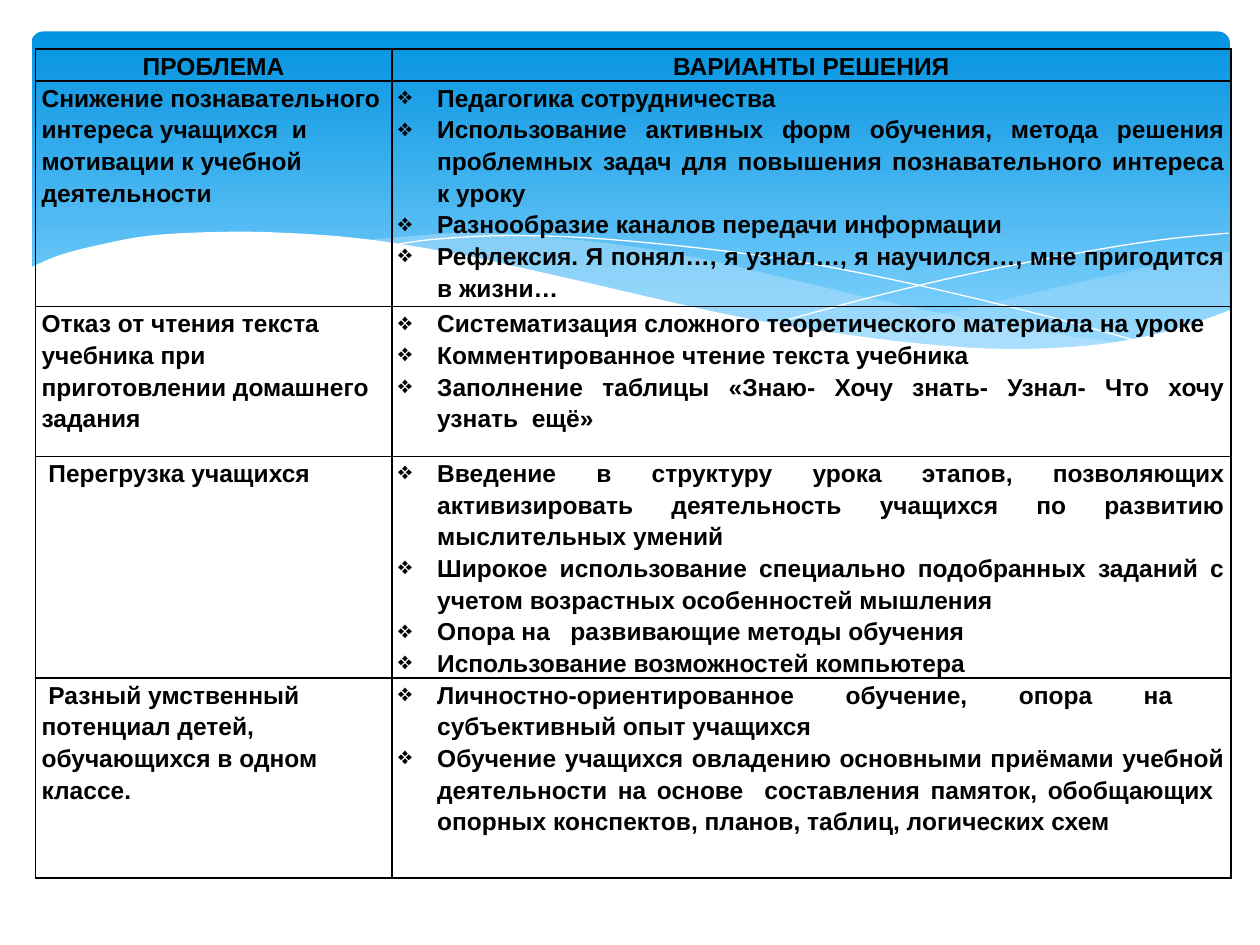
from lxml.etree import SubElement
from pptx import Presentation
from pptx.dml.color import RGBColor
from pptx.enum.shapes import MSO_SHAPE
from pptx.enum.text import PP_ALIGN
from pptx.oxml.ns import qn
from pptx.util import Inches, Pt

BLACK = RGBColor(0x00, 0x00, 0x00)
WHITE = RGBColor(0xFF, 0xFF, 0xFF)
DEEP_BLUE = RGBColor(0x02, 0x93, 0xE0)
SKY_BLUE = RGBColor(0x83, 0xD3, 0xFE)
PALE_BLUE = RGBColor(0xC6, 0xE7, 0xFC)

HEADERS = ["ПРОБЛЕМА", "ВАРИАНТЫ РЕШЕНИЯ"]
PROBLEMS = [
    ("Снижение познавательного интереса учащихся  и мотивации к учебной деятельности", [
        "Педагогика сотрудничества",
        "Использование активных форм обучения, метода решения проблемных задач "
        "для повышения познавательного интереса к уроку",
        "Разнообразие каналов передачи информации",
        "Рефлексия. Я понял…, я узнал…, я научился…, мне пригодится в жизни…",
    ]),
    ("Отказ от чтения текста учебника при приготовлении домашнего задания", [
        "Систематизация сложного теоретического материала на уроке ",
        "Комментированное чтение текста учебника ",
        "Заполнение таблицы «Знаю- Хочу знать- Узнал- Что хочу узнать  ещё»",
    ]),
    (" Перегрузка учащихся", [
        "Введение в структуру урока этапов, позволяющих активизировать "
        "деятельность учащихся по развитию мыслительных умений ",
        "Широкое использование специально подобранных заданий с учетом "
        "возрастных особенностей мышления",
        "Опора на   развивающие методы обучения",
        "Использование возможностей компьютера",
    ]),
    (" Разный умственный потенциал детей, обучающихся в одном классе.", [
        "Личностно-ориентированное обучение, опора на  субъективный опыт учащихся ",
        "Обучение учащихся овладению основными приёмами учебной деятельности на основе  "
        "составления памяток, обобщающих  опорных конспектов, планов, таблиц, логических схем",
    ]),
]
COLUMN_WIDTHS = [2.83, 6.66]
ROW_HEIGHTS = [0.2, 1.79, 1.19, 1.64, 1.59]

RIGHT_TOP = [(9.76, 2), (9.35, 2.07), (8.61, 2.23), (7.53, 2.48), (6.61, 2.65)]
RIGHT_BOTTOM = [(6.61, 2.65), (7.19, 2.72), (7.69, 2.77), (8.24, 2.77),
                (8.81, 2.73), (9.28, 2.63), (9.76, 2.47)]
BAND_TOP = [(8.93, 2.73), (8.07, 2.6), (7.06, 2.4), (6.29, 2.22), (5.55, 2.05),
            (4.89, 1.94), (4.2, 1.87), (3.61, 1.85), (2.86, 1.91)]
BAND_BOTTOM = [(2.86, 1.91), (3.62, 2.03), (4.49, 2.22), (5.3, 2.4), (6.18, 2.58),
               (6.95, 2.7), (7.61, 2.77), (8.28, 2.78), (8.93, 2.73)]
FALLING_LINE = [(3.09, 1.95), (3.44, 1.9), (4.01, 1.87), (4.69, 1.89), (5.56, 1.97),
                (6.36, 2.08), (7.27, 2.26), (8.31, 2.51), (9.07, 2.72)]
RISING_LINE = [(6.13, 2.57), (6.95, 2.35), (7.76, 2.16), (8.66, 1.99),
               (9.24, 1.9), (9.75, 1.85)]
WHITE_EDGE = [(9.77, 2.46), (9.3, 2.62), (8.75, 2.73), (8.09, 2.77), (7.44, 2.74),
              (6.68, 2.65), (5.79, 2.5), (4.47, 2.2), (3.65, 2.02), (2.92, 1.9),
              (2.3, 1.85), (1.77, 1.84), (1.19, 1.87), (0.76, 1.95), (0.46, 2.03),
              (0.23, 2.13)]


def smooth(knots, steps=5):
    padded = [knots[0], *knots, knots[-1]]
    points = [knots[0]]
    for a, b, c, d in zip(padded, padded[1:], padded[2:], padded[3:]):
        for i in range(1, steps + 1):
            t = i / steps
            points.append(tuple(
                (2 * q + (r - p) * t + (2 * p - 5 * q + 4 * r - s) * t ** 2
                 + (3 * q - p - 3 * r + s) * t ** 3) / 2
                for p, q, r, s in zip(a, b, c, d)))
    return points


def add_wave(slide, points, color, alpha=None, closed=True):
    emu = [(Inches(x), Inches(y)) for x, y in points]
    builder = slide.shapes.build_freeform(*emu[0])
    builder.add_line_segments(emu[1:], close=closed)
    sp = builder.convert_to_shape()
    sp.shadow.inherit = False
    if closed:
        sp.fill.solid()
        sp.fill.fore_color.rgb = color
        sp.line.fill.background()
    else:
        sp.fill.background()
        sp.line.color.rgb = color
        sp.line.width = Pt(0)
    if alpha:
        clr = sp.fill._xPr.find(qn("a:solidFill"))[0]
        SubElement(clr, qn("a:alpha"), val=str(alpha * 1000))


def add_backdrop(slide, left, top, width, height):
    sp = slide.shapes.add_shape(MSO_SHAPE.ROUNDED_RECTANGLE, left, top, width, height)
    sp.adjustments[0] = 0.034
    sp.shadow.inherit = False
    sp.line.fill.background()
    sp.fill.gradient()
    sp.fill.gradient_angle = 270
    for stop, color, position in zip(sp.fill.gradient_stops, (DEEP_BLUE, SKY_BLUE), (0, 0.9)):
        stop.color.rgb = color
        stop.position = position
    add_wave(slide, smooth(RIGHT_TOP) + smooth(RIGHT_BOTTOM), PALE_BLUE, 29)
    add_wave(slide, smooth(BAND_TOP) + smooth(BAND_BOTTOM), PALE_BLUE, 40)
    add_wave(slide, smooth(FALLING_LINE), WHITE, closed=False)
    add_wave(slide, smooth(RISING_LINE), WHITE, closed=False)
    add_wave(slide, smooth(WHITE_EDGE) + [(0.23, 3.29), (9.77, 3.29)], WHITE)


def add_borders(cell):
    tcPr = cell._tc.get_or_add_tcPr()
    for i, side in enumerate(("lnL", "lnR", "lnT", "lnB")):
        ln = SubElement(tcPr, qn(f"a:{side}"), w=str(Pt(1)))
        fill = SubElement(ln, qn("a:solidFill"))
        SubElement(fill, qn("a:srgbClr"), val=str(BLACK))
        tcPr.remove(ln)
        tcPr.insert(i, ln)


def fill_cell(cell, lines, align, bulleted=False):
    cell.margin_left = cell.margin_right = Inches(0.05)
    cell.margin_top = cell.margin_bottom = 0
    cell.fill.background()
    add_borders(cell)
    tf = cell.text_frame
    tf.text = "\n".join(lines)
    for p in tf.paragraphs:
        p.alignment = align
        p.line_spacing = 1.15
        p.space_after = Pt(0 if bulleted else 10)
        if bulleted:
            pPr = p._p.get_or_add_pPr()
            pPr.set("marL", str(Inches(0.31)))
            pPr.set("indent", str(-Inches(0.31)))
            SubElement(pPr, qn("a:buChar"), char="❖")
        for r in p.runs:
            r.font.name = "Arial"
            r.font.size = Pt(14)
            r.font.bold = True
            r.font.color.rgb = BLACK


def add_problem_table(slide, left, top, width, height):
    table = slide.shapes.add_table(len(ROW_HEIGHTS), len(COLUMN_WIDTHS),
                                   left, top, width, height).table
    table.first_row = table.horz_banding = False
    for column, size in zip(table.columns, COLUMN_WIDTHS):
        column.width = Inches(size)
    for row, size in zip(table.rows, ROW_HEIGHTS):
        row.height = Inches(size)
    for i, header in enumerate(HEADERS):
        fill_cell(table.cell(0, i), [header], PP_ALIGN.CENTER)
    for i, (problem, solutions) in enumerate(PROBLEMS, 1):
        fill_cell(table.cell(i, 0), [problem], PP_ALIGN.LEFT)
        fill_cell(table.cell(i, 1), solutions, PP_ALIGN.JUSTIFY, bulleted=True)


def main():
    prs = Presentation()
    prs.slide_width, prs.slide_height = Inches(10), Inches(7.5)
    s = prs.slides.add_slide(prs.slide_layouts[6])
    add_backdrop(s, Inches(0.25), Inches(0.25), Inches(9.51), Inches(2.7))
    add_problem_table(s, Inches(0.28), Inches(0.39), Inches(9.49), Inches(sum(ROW_HEIGHTS)))
    prs.save("out.pptx")


if __name__ == "__main__":
    main()
